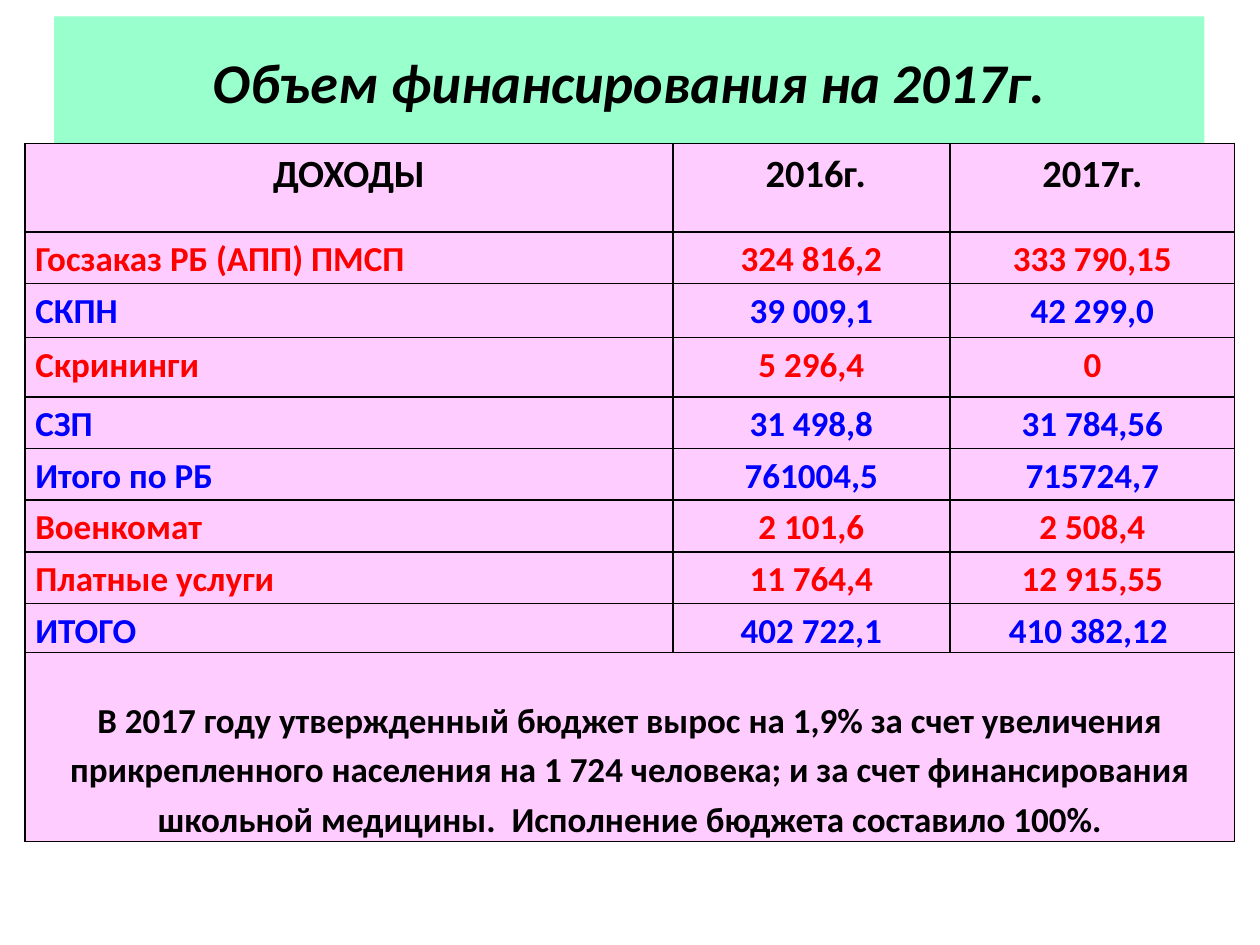
from lxml.etree import SubElement
from pptx import Presentation
from pptx.dml.color import RGBColor
from pptx.enum.shapes import MSO_SHAPE
from pptx.enum.text import MSO_ANCHOR, PP_ALIGN
from pptx.oxml.ns import qn
from pptx.util import Inches, Pt

COLORS = {"black": "000000", "red": "FF0000", "blue": "0000FF",
          "mint": "99FFCC", "pink": "FFCCFF"}
COLUMN_WIDTHS = [5.14, 2.2, 2.26]
ROW_HEIGHTS = [0.7, 0.41, 0.43, 0.47, 0.41, 0.41, 0.41, 0.41, 0.38, 1.5]
ROWS = [
    ("black", "ДОХОДЫ", " 2016г.", "2017г."),
    ("red", "Госзаказ РБ (АПП) ПМСП", "324 816,2", "333 790,15"),
    ("blue", "СКПН", "39 009,1", "42 299,0"),
    ("red", "Скрининги", "5 296,4", "0"),
    ("blue", "СЗП", "31 498,8", "31 784,56"),
    ("blue", "Итого по РБ", "761004,5", "715724,7"),
    ("red", "Военкомат", "2 101,6", "2 508,4"),
    ("red", "Платные услуги", "11 764,4", "12 915,55"),
    ("blue", "ИТОГО", "402 722,1", "410 382,12 "),
    ("black", "В 2017 году утвержденный бюджет вырос на 1,9% за счет увеличения "
     "прикрепленного населения на 1 724 человека; и за счет финансирования "
     "школьной медицины.  Исполнение бюджета составило 100%.", "", ""),
]


def format_text(paragraph, size, color, align):
    paragraph.alignment = align
    font = paragraph.font
    font.name, font.size, font.bold = "Calibri", Pt(size), True
    font.color.rgb = RGBColor.from_string(COLORS[color])


def style_cell(cell):
    """Set the margins, thin black borders and pink fill of a cell."""
    cell.margin_left = cell.margin_right = Inches(0.08)
    cell.margin_top = cell.margin_bottom = 0
    properties = cell._tc.get_or_add_tcPr()
    for side in ("a:lnL", "a:lnR", "a:lnT", "a:lnB"):
        border = SubElement(properties, qn(side), w=str(Pt(1)))
        border_fill = SubElement(border, qn("a:solidFill"))
        SubElement(border_fill, qn("a:srgbClr"), val=COLORS["black"])
    cell.fill.solid()
    cell.fill.fore_color.rgb = RGBColor.from_string(COLORS["pink"])


presentation = Presentation()
presentation.slide_width, presentation.slide_height = Inches(10), Inches(7.5)
slide = presentation.slides.add_slide(presentation.slide_layouts[6])

title = slide.shapes.add_shape(MSO_SHAPE.RECTANGLE, Inches(0.43), Inches(0.13),
                               Inches(9.13), Inches(1.02))
title.shadow.inherit = False
title.fill.solid()
title.fill.fore_color.rgb = RGBColor.from_string(COLORS["mint"])
title.line.fill.background()
title.text_frame.word_wrap = True
title.text_frame.vertical_anchor = MSO_ANCHOR.MIDDLE
title_paragraph = title.text_frame.paragraphs[0]
title_paragraph.text = "Объем финансирования на 2017г."
format_text(title_paragraph, 32, "black", PP_ALIGN.CENTER)
title_paragraph.font.italic = True

table = slide.shapes.add_table(
    len(ROWS), len(COLUMN_WIDTHS), Inches(0.2), Inches(1.14),
    Inches(sum(COLUMN_WIDTHS)), Inches(sum(ROW_HEIGHTS))).table
for column, width in zip(table.columns, COLUMN_WIDTHS):
    column.width = Inches(width)
for row, height in zip(table.rows, ROW_HEIGHTS):
    row.height = Inches(height)

last_row = len(ROWS) - 1
for row_index, (color, *texts) in enumerate(ROWS):
    for column_index, text in enumerate(texts):
        cell = table.cell(row_index, column_index)
        style_cell(cell)
        paragraph = cell.text_frame.paragraphs[0]
        paragraph.text = text
        paragraph.line_spacing = 1.15
        is_label = column_index == 0 and 0 < row_index < last_row
        format_text(paragraph, 22 if row_index == 0 else 20, color,
                    PP_ALIGN.LEFT if is_label else PP_ALIGN.CENTER)

summary = table.cell(last_row, 0)
summary.merge(table.cell(last_row, len(COLUMN_WIDTHS) - 1))
summary.vertical_anchor = MSO_ANCHOR.BOTTOM

presentation.save("out.pptx")
